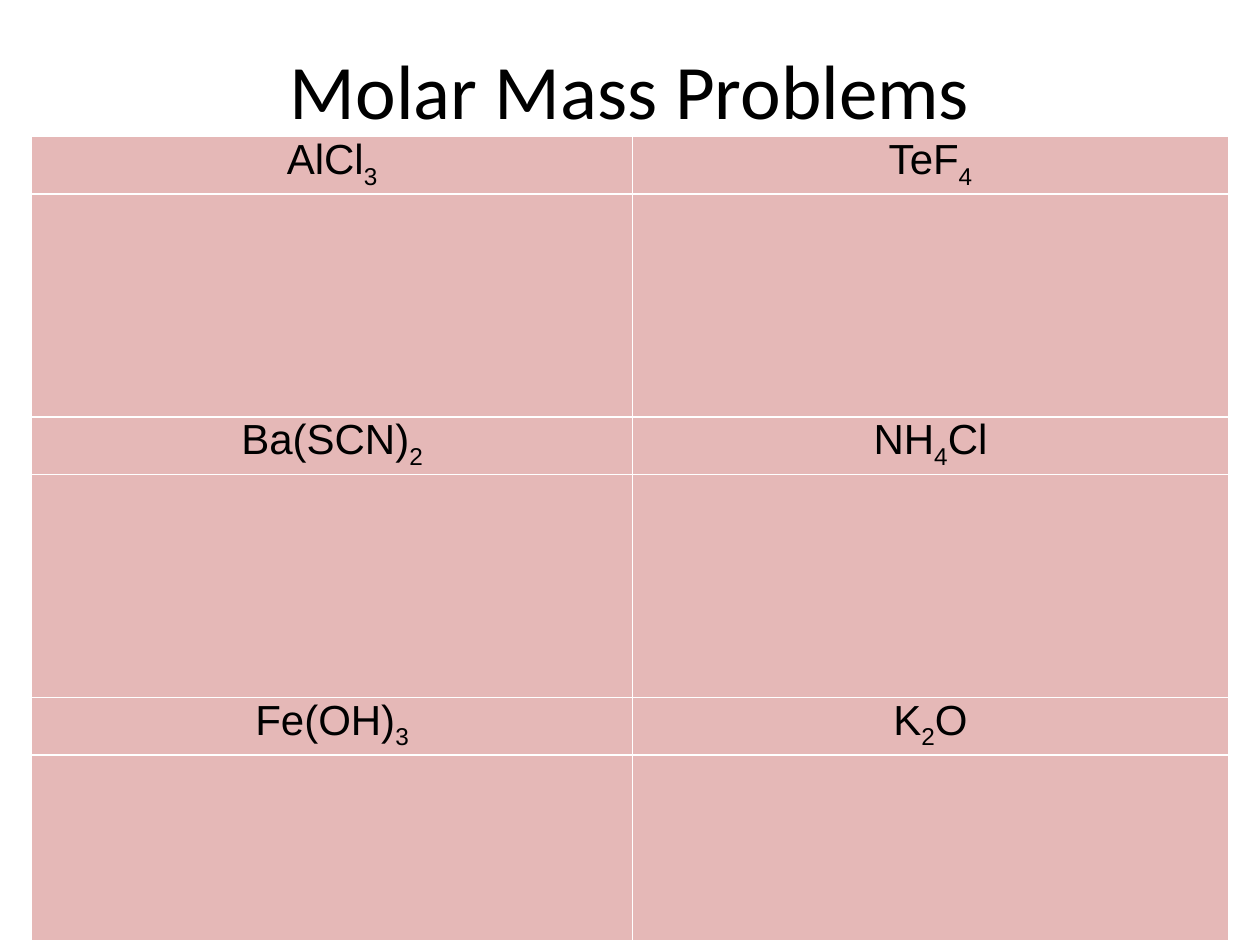
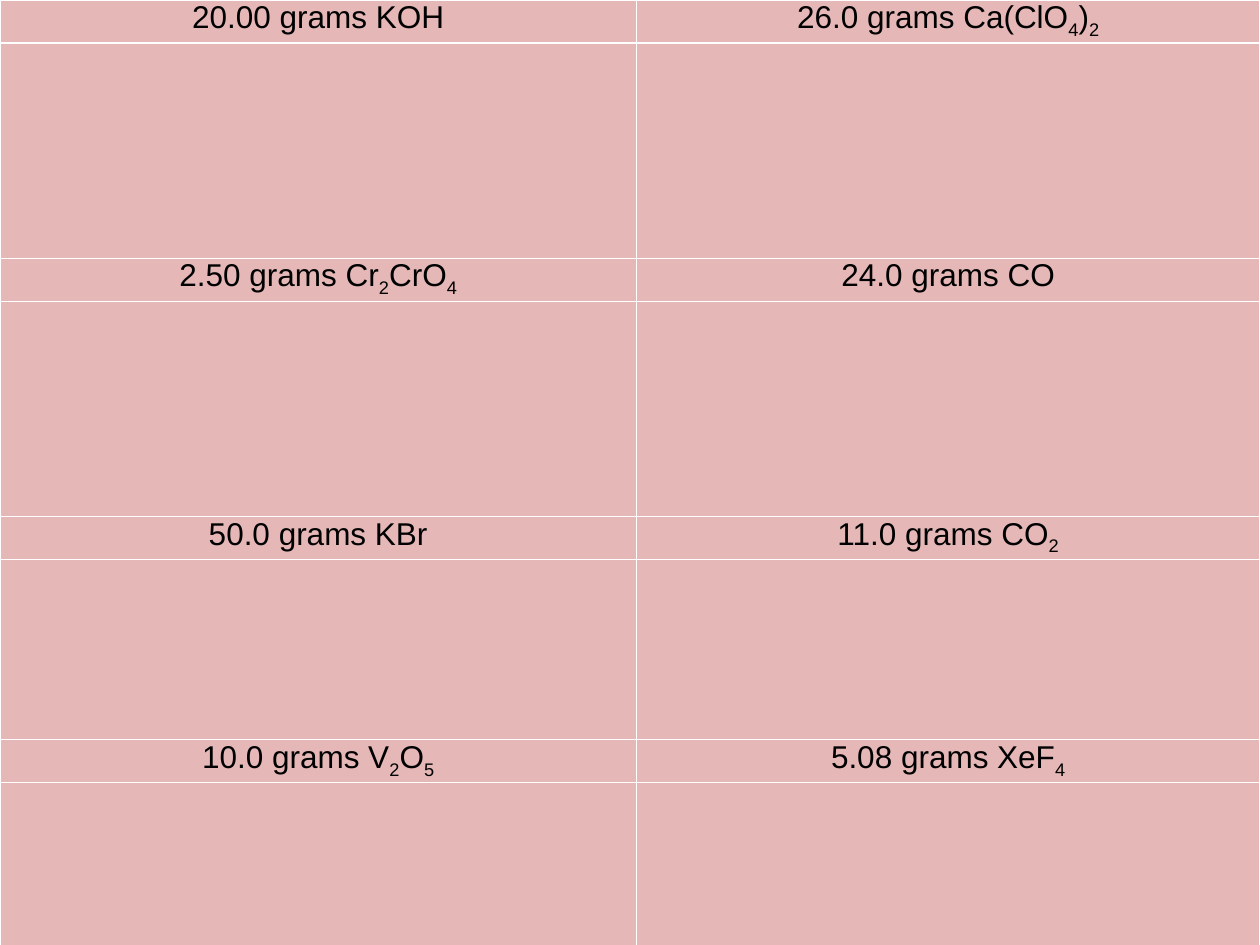
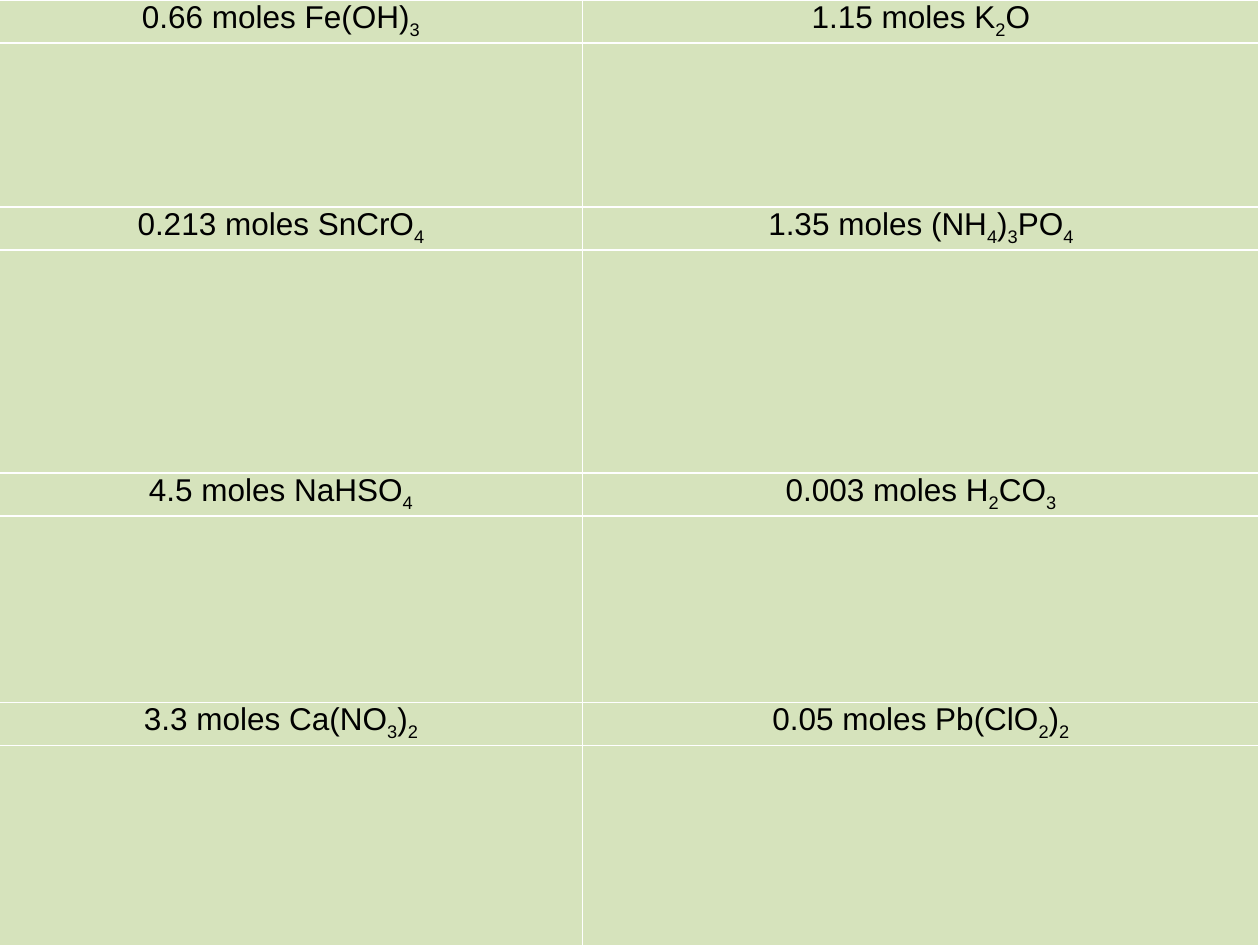
from lxml import etree
from pptx import Presentation
from pptx.dml.color import RGBColor
from pptx.enum.text import MSO_ANCHOR, PP_ALIGN
from pptx.oxml.ns import qn
from pptx.util import Pt

CENTER = PP_ALIGN.CENTER
MIDDLE = MSO_ANCHOR.MIDDLE

# Shared look
BLACK = RGBColor(0x00, 0x00, 0x00)
WHITE = RGBColor(0xFF, 0xFF, 0xFF)
PINK = RGBColor(0xE5, 0xB8, 0xB7)
GREEN = RGBColor(0xD6, 0xE3, 0xBC)
TITLE_FONT = "Calibri"
TABLE_FONT = "Arial"
CELL_INSET = Pt(5.4)
BORDER_WIDTH = Pt(1)
SUBSCRIPT = "-25000"

# Problems in rows of two; "_" marks a subscript digit
MOLAR_MASSES = [
    ("AlCl_3", "TeF_4"),
    ("Ba(SCN)_2", "NH_4Cl"),
    ("Fe(OH)_3", "K_2O"),
]
GRAM_PROBLEMS = [
    ("20.00 grams KOH", "26.0 grams Ca(ClO_4)_2"),
    ("2.50 grams Cr_2CrO_4", "24.0 grams CO"),
    ("50.0 grams KBr", "11.0 grams CO_2"),
    ("10.0 grams V_2O_5", "5.08 grams XeF_4"),
]
MOLE_PROBLEMS = [
    ("0.66 moles Fe(OH)_3", "1.15 moles K_2O"),
    ("0.213 moles SnCrO_4", "1.35 moles (NH_4)_3PO_4"),
    ("4.5 moles NaHSO_4", "0.003 moles H_2CO_3"),
    ("3.3 moles Ca(NO_3)_2", "0.05 moles Pb(ClO_2)_2"),
]


def add_run(paragraph, text, font_name, size):
    run = paragraph.add_run()
    run.text = text
    run.font.name = font_name
    run.font.size = Pt(size)
    run.font.color.rgb = BLACK
    return run


def add_formula(paragraph, formula, size):
    """Write a formula, lowering each digit that follows "_"."""
    first, *rest = formula.split("_")
    add_run(paragraph, first, TABLE_FONT, size)
    for part in rest:
        digit = add_run(paragraph, part[0], TABLE_FONT, size)
        digit._r.get_or_add_rPr().set("baseline", SUBSCRIPT)
        if part[1:]:
            add_run(paragraph, part[1:], TABLE_FONT, size)


def add_title(slide, text):
    box = slide.shapes.add_textbox(Pt(36), Pt(5.76), Pt(648), Pt(90))
    frame = box.text_frame
    frame.word_wrap = True
    frame.vertical_anchor = MIDDLE
    paragraph = frame.paragraphs[0]
    paragraph.alignment = CENTER
    add_run(paragraph, text, TITLE_FONT, 44)


def style_cell(cell, color):
    cell.margin_left = cell.margin_right = CELL_INSET
    cell.margin_top = cell.margin_bottom = 0
    properties = cell._tc.get_or_add_tcPr()
    for side in ("a:lnL", "a:lnR", "a:lnT", "a:lnB"):
        line = etree.SubElement(properties, qn(side), w=str(BORDER_WIDTH))
        fill = etree.SubElement(line, qn("a:solidFill"))
        etree.SubElement(fill, qn("a:srgbClr"), val=str(WHITE))
    cell.fill.solid()
    cell.fill.fore_color.rgb = color


def add_problem_table(slide, problems, left, top, widths, label_height,
                      work_heights, size, color):
    """Alternate a row of problems with an empty row for working."""
    heights = [height for work in work_heights for height in (label_height, work)]
    table = slide.shapes.add_table(
        len(heights), len(widths), Pt(left), Pt(top),
        Pt(sum(widths)), Pt(sum(heights))).table
    table.first_row = table.horz_banding = False
    for column, width in zip(table.columns, widths):
        column.width = Pt(width)
    for row, height in zip(table.rows, heights):
        row.height = Pt(height)
    for cell in table.iter_cells():
        style_cell(cell, color)
    for index, pair in enumerate(problems):
        for column, formula in enumerate(pair):
            paragraph = table.cell(2 * index, column).text_frame.paragraphs[0]
            paragraph.alignment = CENTER
            add_formula(paragraph, formula, size)


def main():
    presentation = Presentation()
    presentation.slide_width = Pt(720)
    presentation.slide_height = Pt(540)
    blank = presentation.slide_layouts[6]

    # Molar masses
    slide = presentation.slides.add_slide(blank)
    add_title(slide, "Molar Mass Problems")
    add_problem_table(slide, MOLAR_MASSES, 18, 78, (343.5, 340.5), 21.6,
                      (127.5, 127.5, 106.5), 24, PINK)

    # Grams to moles
    slide = presentation.slides.add_slide(blank)
    add_problem_table(slide, GRAM_PROBLEMS, 0, 0, (363.6, 356.4), 21,
                      (123, 123, 103, 103), 18, PINK)

    # Moles to grams
    slide = presentation.slides.add_slide(blank)
    add_problem_table(slide, MOLE_PROBLEMS, -12, 0, (345, 386.5), 21.6,
                      (93.6, 127.5, 106.5, 127.5), 18, GREEN)

    presentation.save("out.pptx")


if __name__ == "__main__":
    main()
